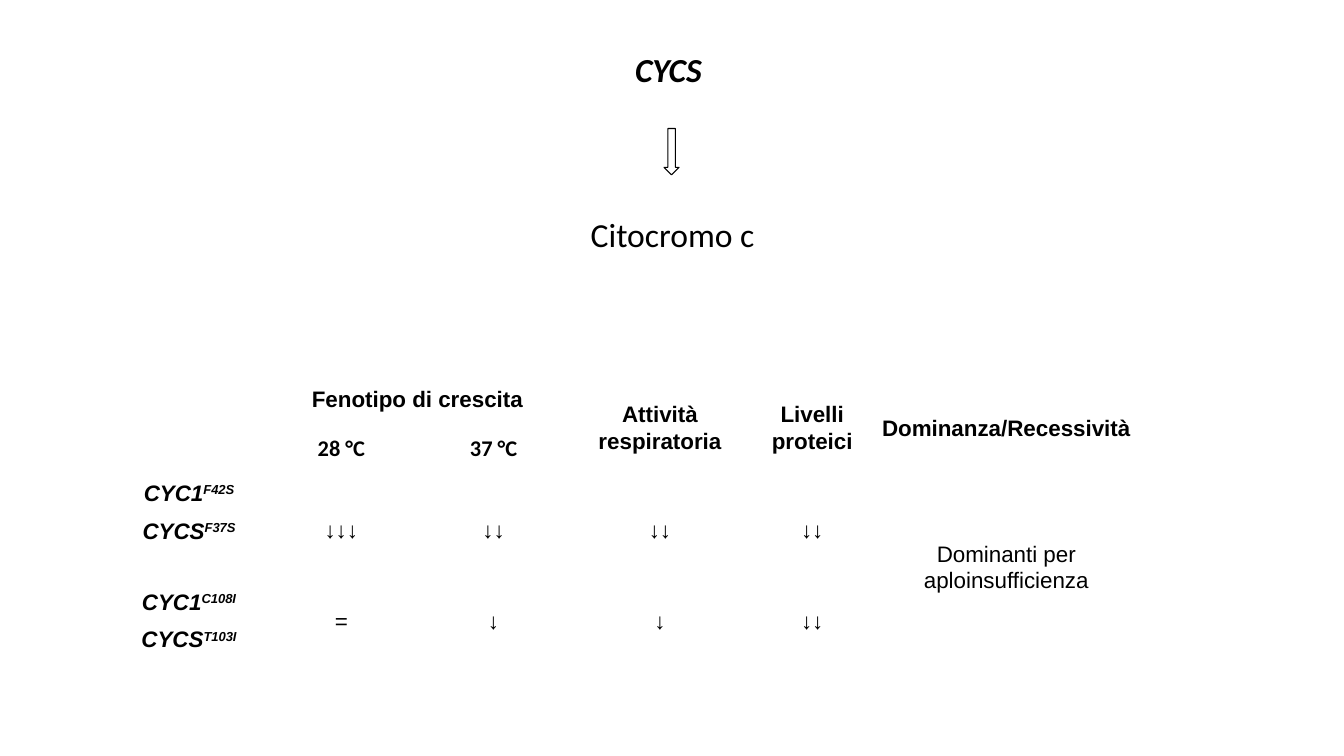
from dataclasses import dataclass

import pptx
import pptx.dml.color
import pptx.enum.shapes
import pptx.enum.text
import pptx.util

COLORS = {"ink": "000000"}
SLIDE_WIDTH = pptx.util.Inches(13.33)
SLIDE_HEIGHT = pptx.util.Inches(7.5)
CENTER = pptx.enum.text.PP_ALIGN.CENTER
LEFT = pptx.enum.text.PP_ALIGN.LEFT

# Percentages of the slide's width and height
COLUMN_SHARES = (11.33, 11.33, 11.33, 13.43, 9.23, 19.65)
ROW_SHARES = (5.47, 7.6, 14.13, 9.73)


@dataclass(frozen=True)
class Run:
    text: str
    size: int = 16
    font: str = "Arial"
    bold: bool = True
    italic: bool = False
    superscript: bool = False


@dataclass(frozen=True)
class Label:
    run: Run
    left: float
    top: float
    width: float
    height: float
    align: pptx.enum.text.PP_ALIGN


@dataclass(frozen=True)
class Entry:
    row: int
    column: int
    paragraphs: tuple[tuple[Run, ...], ...]
    row_span: int = 1
    column_span: int = 1
    bottom: float = 0


def across(percent: float) -> int:
    return round(SLIDE_WIDTH * percent / 100)


def down(percent: float) -> int:
    return round(SLIDE_HEIGHT * percent / 100)


def plain(text: str, font: str = "Arial", bold: bool = True) -> tuple[tuple[Run, ...], ...]:
    """One paragraph of one run."""
    return ((Run(text, font=font, bold=bold),),)


def variants(yeast: str, human: str) -> tuple[tuple[Run, ...], ...]:
    """Yeast and human genes, each with its mutation raised."""
    return tuple(
        (Run(gene, italic=True), Run(mutation, italic=True, superscript=True))
        for gene, mutation in (("CYC1", yeast), ("CYCS", human))
    )


LABELS = (
    Label(Run("CYCS", 24, "Calibri", italic=True), 46.51, 5.87, 6.98, 6.67, LEFT),
    Label(Run("Citocromo c", 24, "Calibri", bold=False), 42.69, 27.6, 14.7, 6.67, CENTER),
)

ENTRIES = (
    Entry(0, 0, (), row_span=2),
    Entry(0, 1, plain("Fenotipo di crescita"), column_span=2),
    Entry(0, 3, plain("Attività respiratoria"), row_span=2),
    Entry(0, 4, plain("Livelli proteici"), row_span=2),
    Entry(0, 5, plain("Dominanza/Recessività"), row_span=2),
    Entry(1, 1, plain("28 °C", "Calibri")),
    Entry(1, 2, plain("37 °C", "Calibri")),
    Entry(2, 0, variants("F42S", "F37S"), bottom=4.9),
    Entry(2, 1, plain("↓↓↓")),
    Entry(2, 2, plain("↓↓")),
    Entry(2, 3, plain("↓↓")),
    Entry(2, 4, plain("↓↓")),
    Entry(2, 5, plain("Dominanti per aploinsufficienza", bold=False), row_span=2),
    Entry(3, 0, variants("C108I", "T103I")),
    Entry(3, 1, plain("=", bold=False)),
    Entry(3, 2, plain("↓")),
    Entry(3, 3, plain("↓")),
    Entry(3, 4, plain("↓↓")),
)


def add_run(paragraph, content: Run) -> None:
    run = paragraph.add_run()
    run.text = content.text
    font = run.font
    font.name = content.font
    font.size = pptx.util.Pt(content.size)
    font.bold = content.bold
    font.italic = content.italic
    font.color.rgb = pptx.dml.color.RGBColor.from_string(COLORS["ink"])
    if content.superscript:
        run._r.get_or_add_rPr().set("baseline", "30000")


def add_label(slide, label: Label) -> None:
    frame = slide.shapes.add_textbox(
        across(label.left), down(label.top), across(label.width), down(label.height)
    ).text_frame
    frame.word_wrap = True
    frame.auto_size = pptx.enum.text.MSO_AUTO_SIZE.SHAPE_TO_FIT_TEXT
    frame.paragraphs[0].alignment = label.align
    add_run(frame.paragraphs[0], label.run)


def add_expression_arrow(slide) -> None:
    """Downward arrow from the gene to its protein."""
    arrow = slide.shapes.add_shape(
        pptx.enum.shapes.MSO_SHAPE.RIGHT_ARROW,
        across(48.24), down(19.07), across(3.45), down(2),
    )
    arrow.rotation = 90
    arrow.shadow.inherit = False
    arrow.fill.background()
    arrow.line.color.rgb = pptx.dml.color.RGBColor.from_string(COLORS["ink"])
    arrow.line.width = pptx.util.Pt(0.75)


def fill_entry(table, entry: Entry) -> None:
    cell = table.cell(entry.row, entry.column)
    if entry.row_span > 1 or entry.column_span > 1:
        cell.merge(table.cell(
            entry.row + entry.row_span - 1, entry.column + entry.column_span - 1
        ))
    cell.margin_bottom = down(entry.bottom)
    for index, runs in enumerate(entry.paragraphs):
        frame = cell.text_frame
        paragraph = frame.add_paragraph() if index else frame.paragraphs[0]
        paragraph.alignment = CENTER
        paragraph.line_spacing = 1.07
        paragraph.space_after = pptx.util.Pt(8)
        for run in runs:
            add_run(paragraph, run)


def add_phenotypes(slide) -> None:
    table = slide.shapes.add_table(
        len(ROW_SHARES), len(COLUMN_SHARES), across(8.4), down(50),
        across(sum(COLUMN_SHARES)), down(sum(ROW_SHARES)),
    ).table
    table.first_row = False
    table.horz_banding = False
    for column, share in zip(table.columns, COLUMN_SHARES):
        column.width = across(share)
    for row, share in zip(table.rows, ROW_SHARES):
        row.height = down(share)
    for cell in table.iter_cells():
        cell.fill.background()
        cell.vertical_anchor = pptx.enum.text.MSO_ANCHOR.MIDDLE
        cell.margin_left = cell.margin_right = across(0.53)
        cell.margin_top = cell.margin_bottom = 0
    for entry in ENTRIES:
        fill_entry(table, entry)


def main() -> None:
    deck = pptx.Presentation()
    deck.slide_width = SLIDE_WIDTH
    deck.slide_height = SLIDE_HEIGHT
    slide = deck.slides.add_slide(deck.slide_layouts[6])
    for label in LABELS:
        add_label(slide, label)
    add_expression_arrow(slide)
    add_phenotypes(slide)
    deck.save("out.pptx")


if __name__ == "__main__":
    main()
